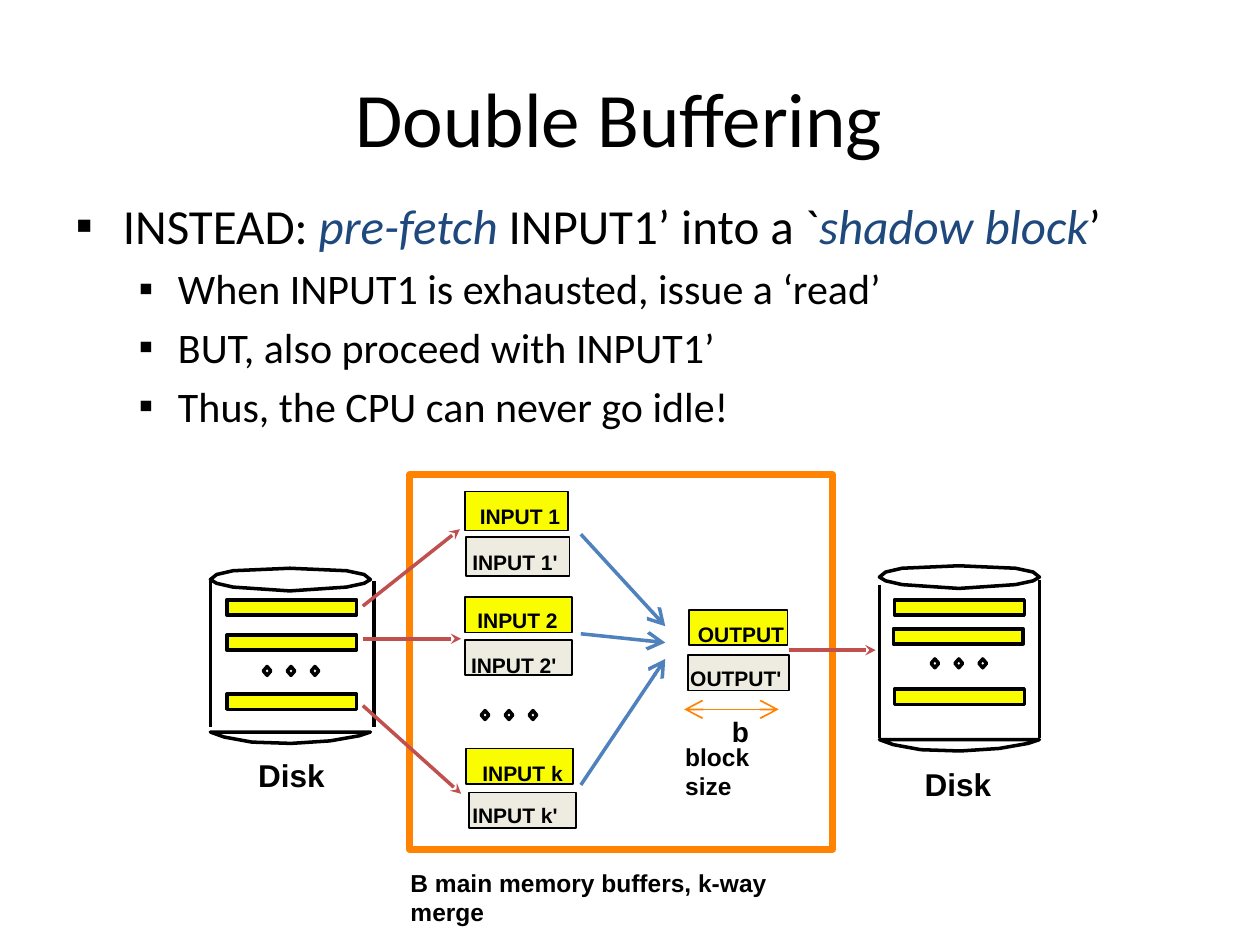
from dataclasses import dataclass

from lxml import etree
from pptx import Presentation
from pptx.dml.color import RGBColor
from pptx.enum.shapes import MSO_CONNECTOR, MSO_SHAPE
from pptx.enum.text import MSO_AUTO_SIZE
from pptx.oxml.ns import qn
from pptx.util import Inches, Pt

STRAIGHT = MSO_CONNECTOR.STRAIGHT
RECTANGLE = MSO_SHAPE.RECTANGLE
DIAMOND = MSO_SHAPE.DIAMOND
GROW = MSO_AUTO_SIZE.SHAPE_TO_FIT_TEXT


@dataclass(frozen=True)
class Theme:
    heading_font: str = "Calibri"
    label_font: str = "Arial"
    ink: str = "000000"
    emphasis: str = "1F497D"
    active: str = "FAFD00"
    shadow: str = "EEECE1"
    memory: str = "FF8200"
    merge: str = "4F81BD"
    transfer: str = "C0504D"
    title_size: int = 44
    bullet_sizes: tuple = (28, 24)
    disk_size: int = 18
    symbol_size: int = 16
    note_size: int = 14
    buffer_size: int = 12


LID = [(1.27, 0), (1.22, -0.04), (1.08, -0.07), (0.63, -0.09), (0.18, -0.07),
       (0.05, -0.04), (0, 0), (0.05, 0.03), (0.18, 0.06), (0.63, 0.09),
       (1.08, 0.06), (1.22, 0.03)]
BASE = [(0, 0), (0.11, 0.04), (0.33, 0.08), (0.64, 0.09), (0.95, 0.07),
        (1.18, 0.03), (1.27, 0)]


class SlideBuilder:
    """Draws themed elements on the current slide."""

    def __init__(self, slide, theme):
        self.slide = slide
        self.theme = theme

    def format_run(self, run, size, font, color, bold=False, italic=False):
        run.font.size = Pt(size)
        run.font.name = font
        run.font.color.rgb = RGBColor.from_string(color)
        run.font.bold = bold
        run.font.italic = italic

    def place(self, item, left, top, width, height):
        item.left, item.top = Inches(left), Inches(top)
        item.width, item.height = Inches(width), Inches(height)

    def title(self, wording, box):
        heading = self.slide.shapes.title
        self.place(heading, *box)
        heading.text_frame.text = wording
        self.format_run(heading.text_frame.paragraphs[0].runs[0],
                        self.theme.title_size, self.theme.heading_font, self.theme.ink)

    def bullets(self, points, box):
        body = self.slide.placeholders[1]
        self.place(body, *box)
        frame = body.text_frame
        for index, (level, pieces) in enumerate(points):
            paragraph = frame.add_paragraph() if index else frame.paragraphs[0]
            paragraph.level = level
            bullet = etree.SubElement(paragraph._p.get_or_add_pPr(), qn("a:buChar"))
            bullet.set("char", "▪")
            for wording, stressed in pieces:
                run = paragraph.add_run()
                run.text = wording
                color = self.theme.emphasis if stressed else self.theme.ink
                self.format_run(run, self.theme.bullet_sizes[level],
                                self.theme.heading_font, color, italic=stressed)

    def outline(self, shape, fill, color, width):
        shape.shadow.inherit = False
        if fill:
            shape.fill.solid()
            shape.fill.fore_color.rgb = RGBColor.from_string(fill)
        else:
            shape.fill.background()
        shape.line.color.rgb = RGBColor.from_string(color)
        shape.line.width = Pt(width)

    def block(self, box, fill=None, color=None, width=2, preset=RECTANGLE):
        shape = self.slide.shapes.add_shape(preset, *map(Inches, box))
        self.outline(shape, fill, color or self.theme.ink, width)

    def curve(self, points, left, top):
        corners = [(Inches(left + x), Inches(top + y)) for x, y in points]
        builder = self.slide.shapes.build_freeform(*corners[0], scale=1.0)
        builder.add_line_segments(corners[1:], close=True)
        self.outline(builder.convert_to_shape(), None, self.theme.ink, 2)

    def line(self, start, end, color, width=2, head=None, tail=None, size="med"):
        connector = self.slide.shapes.add_connector(STRAIGHT, *map(Inches, start + end))
        connector.line.color.rgb = RGBColor.from_string(color)
        connector.line.width = Pt(width)
        properties = connector.element.spPr
        stroke = properties.find(qn("a:ln"))
        for tag, kind in (("a:headEnd", head), ("a:tailEnd", tail)):
            if kind:
                etree.SubElement(stroke, qn(tag), type=kind, w=size, len=size)
        etree.SubElement(properties, qn("a:effectLst"))

    def label(self, wording, box, size, wrap=False):
        caption = self.slide.shapes.add_textbox(*map(Inches, box))
        frame = caption.text_frame
        frame.text = wording
        frame.word_wrap = wrap
        frame.auto_size = GROW
        self.format_run(frame.paragraphs[0].runs[0], size,
                        self.theme.label_font, self.theme.ink, bold=True)

    def buffer(self, wording, box, label_box, fill):
        self.block(box, fill, width=1)
        self.label(wording, label_box, self.theme.buffer_size)

    def ellipsis(self, left, top):
        for step in range(3):
            self.block((left + 0.19 * step, top, 0.06, 0.07), preset=DIAMOND)

    def disk(self, left, lid, base, sides, records, dots, label_at):
        self.curve(LID, left, lid)
        self.curve(BASE, left, base)
        for x, top, bottom in sides:
            self.line((x, top), (x, bottom), self.theme.ink)
        for x, y in records:
            self.block((x, y, 1.03, 0.12), self.theme.active)
        self.ellipsis(*dots)
        self.label("Disk", (*label_at, 0.73, 0.4), self.theme.disk_size)


def main():
    deck = Presentation()
    deck.slide_width, deck.slide_height = Inches(10), Inches(7.5)
    theme = Theme()
    page = SlideBuilder(deck.slides.add_slide(deck.slide_layouts[1]), theme)

    page.title("Double Buffering", (0, 0.3, 9.83, 1.25))
    page.bullets([
        (0, [("INSTEAD: ", False), ("pre-fetch", True), (" INPUT1’ into a `", False),
             ("shadow block", True), ("’", False)]),
        (1, [("When INPUT1 is exhausted, issue a ‘read’", False)]),
        (1, [("BUT, also proceed with INPUT1’", False)]),
        (1, [("Thus, the CPU can never go idle!", False)]),
    ], (0.5, 1.5, 9.08, 5.67))

    page.block((3.25, 3.77, 3.36, 2.97), color=theme.memory, width=4)
    page.disk(1.67, 4.6, 5.81, [(1.67, 4.61, 5.77), (2.97, 4.61, 5.77)],
              [(1.8, 4.76), (1.8, 5.04), (1.8, 5.51)], (2.09, 5.29), (1.95, 5.95))
    page.disk(6.98, 4.58, 5.87, [(6.98, 4.64, 5.86), (8.25, 4.6, 5.86)],
              [(7.1, 4.76), (7.09, 4.99), (7.1, 5.47)], (7.39, 5.23), (7.24, 6.02))

    for wording, box, label_box in (
        ("INPUT 1", (3.69, 3.9, 0.82, 0.31), (3.71, 3.95, 0.86, 0.3)),
        ("INPUT 1'", (3.7, 4.26, 0.82, 0.31), (3.65, 4.31, 0.9, 0.3)),
        ("INPUT 2", (3.69, 4.74, 0.85, 0.28), (3.69, 4.77, 0.86, 0.3)),
        ("INPUT 2'", (3.69, 5.08, 0.85, 0.28), (3.64, 5.13, 0.9, 0.3)),
        ("INPUT k", (3.7, 5.94, 0.85, 0.28), (3.73, 5.99, 0.86, 0.3)),
        ("INPUT k'", (3.72, 6.29, 0.85, 0.28), (3.65, 6.32, 0.9, 0.3)),
        ("OUTPUT", (5.47, 4.84, 0.78, 0.28), (5.44, 4.88, 0.93, 0.3)),
        ("OUTPUT'", (5.46, 5.2, 0.8, 0.28), (5.38, 5.23, 0.97, 0.3)),
    ):
        fill = theme.shadow if wording.endswith("'") else theme.active
        page.buffer(wording, box, label_box, fill)
    page.ellipsis(3.82, 5.64)

    for source, target in ((4.24, 4.97), (5.03, 5.1), (6.23, 5.23)):
        page.line((4.61, source), (5.28, target), theme.merge, tail="arrow", size="lg")
    for start, end in (
        ((2.88, 4.81), (3.65, 4.2)),
        ((2.88, 5.07), (3.66, 5.07)),
        ((2.88, 5.6), (3.66, 6.3)),
        ((6.26, 5.16), (6.95, 5.16)),
    ):
        page.line(start, end, theme.transfer, tail="stealth")

    page.line((5.43, 5.63), (6.18, 5.63), theme.memory, 1, "arrow", "arrow", "lg")
    page.label("b", (5.71, 5.62, 0.33, 0.36), theme.symbol_size)
    page.label("block size", (5.34, 5.84, 1.1, 0.33), theme.note_size, wrap=True)
    page.label("B main memory buffers, k-way merge", (3.16, 6.84, 3.5, 0.33),
               theme.note_size, wrap=True)
    deck.save("out.pptx")


if __name__ == "__main__":
    main()
